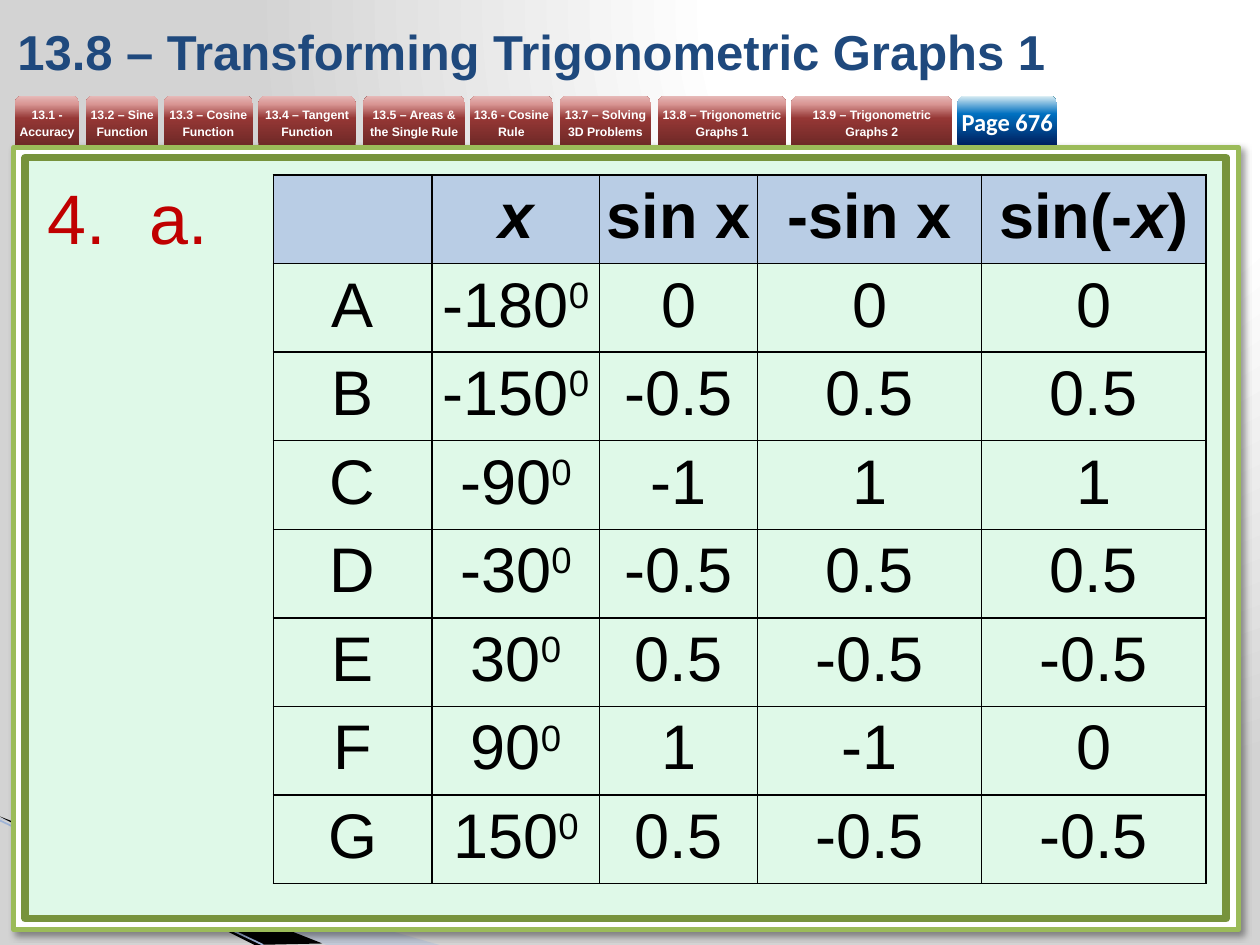
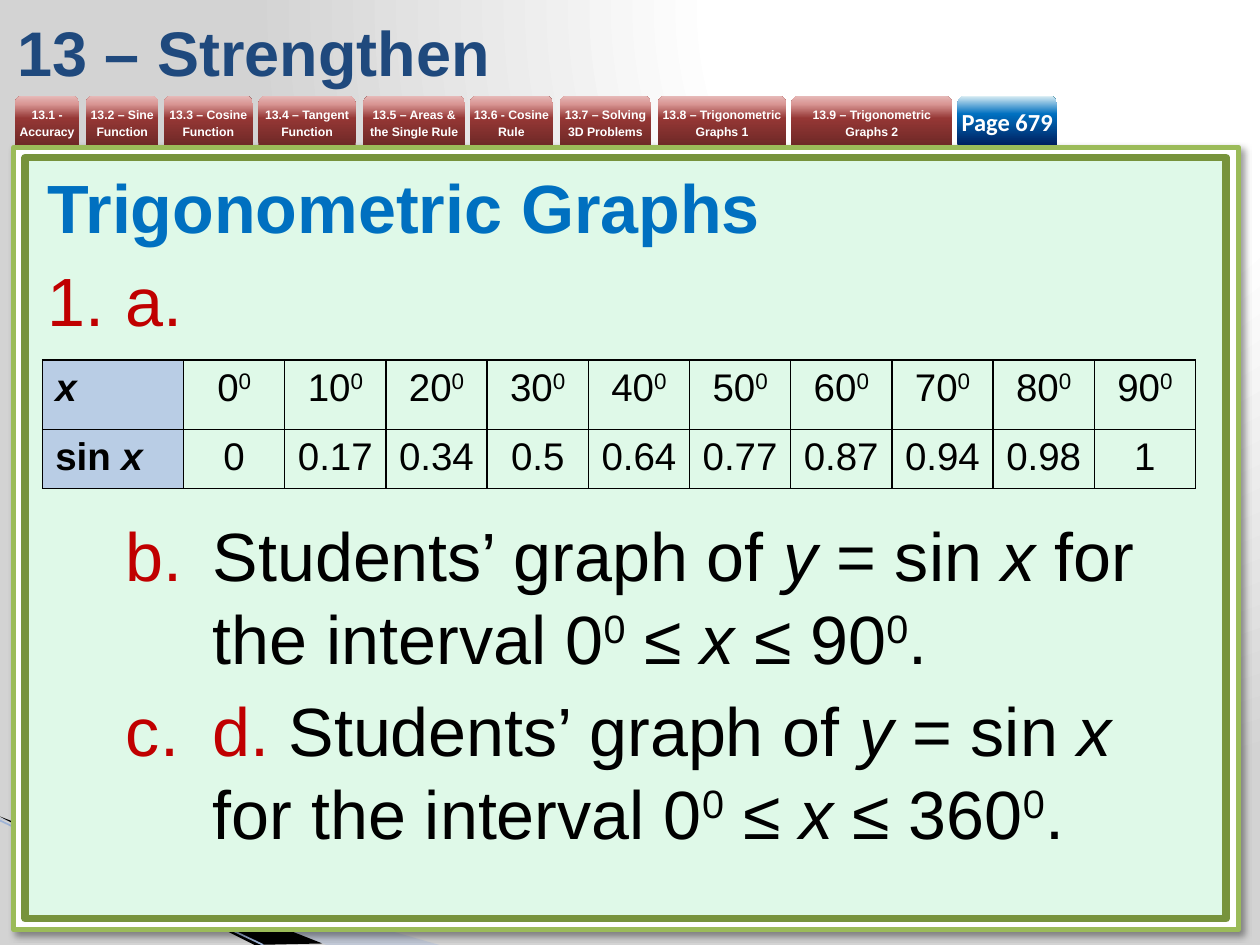
from lxml import etree
from pptx import Presentation
from pptx import util as u
from pptx.dml.color import RGBColor
from pptx.enum import shapes, text
from pptx.oxml import ns

Cm, Pt = u.Cm, u.Pt
WHITE = RGBColor(0xFF, 0xFF, 0xFF)
BLACK = RGBColor(0, 0, 0)
SILVER = RGBColor(0xD3, 0xD3, 0xD3)
NAVY = RGBColor(0x1F, 0x49, 0x7D)
BLUE = RGBColor(0x00, 0x70, 0xC0)
RED = RGBColor(0xC0, 0, 0)
MINT = RGBColor(0xDF, 0xF9, 0xE8)
LIME = RGBColor(0x9B, 0xBB, 0x59)
OLIVE = RGBColor(0x77, 0x93, 0x3C)
HEADER_BLUE = RGBColor(0xB9, 0xCD, 0xE5)
WEDGE_BLUE = RGBColor(0xA7, 0xB9, 0xDB)
EDGE_BLUE = RGBColor(0x9E, 0xB3, 0xD6)

BACKDROP = [(0, WHITE), (40, WHITE), (100, SILVER)]
TAB_RED = [(0, RGBColor(0x6F, 0x29, 0x27)), (54, RGBColor(0x95, 0x37, 0x35)),
           (83, RGBColor(0xD9, 0x96, 0x94)), (100, RGBColor(0xE6, 0xB9, 0xB8))]
TAB_BLUE = [(0, RGBColor(0x00, 0x20, 0x60)), (63, BLUE),
            (100, RGBColor(0xDB, 0xEE, 0xF4))]

SECTIONS = [
    (0.3, 1.3, "13.1 - Accuracy"),
    (1.73, 1.47, "13.2 – Sine Function"),
    (3.3, 1.8, "13.3 – Cosine Function"),
    (5.21, 1.96, "13.4 – Tangent Function"),
    (7.32, 2.06, "13.5 – Areas & the Single Rule"),
    (9.47, 1.68, "13.6 - Cosine Rule"),
    (11.28, 1.85, "13.7 – Solving 3D Problems"),
    (13.26, 2.59, "13.8 – Trigonometric Graphs 1"),
    (15.95, 3.25, "13.9 – Trigonometric Graphs 2"),
]


def child(parent, tag, **attributes):
    return etree.SubElement(parent, ns.qn(tag), attributes)


def fill_gradient(owner, fill, stops, focus=None):
    fill.gradient()
    gradient = owner._element.find(".//" + ns.qn("a:gradFill"))
    for old in list(gradient):
        gradient.remove(old)
    stop_list = child(gradient, "a:gsLst")
    for position, color in stops:
        stop = child(stop_list, "a:gs", pos=str(position * 1000))
        child(stop, "a:srgbClr", val=str(color))
    if focus:
        path = child(gradient, "a:path", path="circle")
        child(path, "a:fillToRect", **focus)
    else:
        child(gradient, "a:lin", ang="16200000", scaled="0")


def add_runs(paragraph, runs, size, color, font="Arial"):
    for words, style in runs:
        run = paragraph.add_run()
        run.text = words
        run.font.name = font
        run.font.size = Pt(size)
        run.font.color.rgb = RED if "r" in style else color
        run.font.bold = "b" in style
        run.font.italic = "i" in style
        if "s" in style:
            run._r.get_or_add_rPr().set("baseline", "30000")


def degrees(number):
    return [(str(number), ""), ("0", "s")]


def add_wedge(slide, color, points, alpha=None):
    corners = [(Cm(x), Cm(y)) for x, y in points]
    builder = slide.shapes.build_freeform(*corners[0])
    builder.add_line_segments(corners[1:], close=True)
    wedge = builder.convert_to_shape()
    wedge.shadow.inherit = False
    wedge.fill.solid()
    wedge.fill.fore_color.rgb = color
    wedge.line.fill.background()
    if alpha:
        tint = wedge._element.spPr.find(".//" + ns.qn("a:srgbClr"))
        child(tint, "a:alpha", val=str(alpha * 1000))


def add_panel(slide, left, top, width, height, fill, edge, weight):
    panel = slide.shapes.add_shape(shapes.MSO_SHAPE.RECTANGLE,
                                   Cm(left), Cm(top), Cm(width), Cm(height))
    panel.shadow.inherit = False
    panel.fill.solid()
    panel.fill.fore_color.rgb = fill
    panel.line.color.rgb = edge
    panel.line.width = Pt(weight)
    return panel


def drop_shadow(panel):
    effects = panel._element.spPr.find(ns.qn("a:effectLst"))
    shadow = child(effects, "a:outerShdw", blurRad=str(Pt(4)),
                   dist=str(Pt(3)), dir="2700000", algn="tl", rotWithShape="0")
    child(child(shadow, "a:srgbClr", val=str(BLACK)), "a:alpha", val="40000")


def add_tab(slide, left, width, label, stops, size, font="Arial", spacing=None):
    tab = slide.shapes.add_shape(shapes.MSO_SHAPE.ROUND_2_SAME_RECTANGLE,
                                 Cm(left), Cm(1.93), Cm(width), Cm(0.99))
    tab.shadow.inherit = False
    fill_gradient(tab, tab.fill, stops)
    tab.line.fill.background()
    frame = tab.text_frame
    frame.margin_left = frame.margin_right = 0
    frame.margin_top = frame.margin_bottom = 0
    frame.vertical_anchor = text.MSO_ANCHOR.MIDDLE
    paragraph = frame.paragraphs[0]
    paragraph.alignment = text.PP_ALIGN.CENTER
    if spacing:
        paragraph.line_spacing = Pt(spacing)
    add_runs(paragraph, [(label, "b")], size, WHITE, font)


def add_box(slide, left, top, width, height):
    frame = slide.shapes.add_textbox(Cm(left), Cm(top), Cm(width),
                                     Cm(height)).text_frame
    frame.word_wrap = True
    return frame


def number(paragraph, scheme, start, margin, hanging):
    properties = paragraph._p.get_or_add_pPr()
    properties.set("marL", str(Cm(margin)))
    properties.set("indent", str(-Cm(hanging)))
    child(child(properties, "a:buClr"), "a:srgbClr", val=str(RED))
    child(properties, "a:buAutoNum", type=scheme, startAt=str(start))


def style_cell(cell, header):
    properties = cell._tc.get_or_add_tcPr()
    for side in ("a:lnL", "a:lnR", "a:lnT", "a:lnB"):
        border = child(properties, side, w=str(Pt(1)))
        child(child(border, "a:solidFill"), "a:srgbClr", val=str(BLACK))
    if header:
        cell.fill.solid()
        cell.fill.fore_color.rgb = HEADER_BLUE
    else:
        cell.fill.background()


def add_grid(slide, left, top, widths, heights, rows, size, is_header,
             margin=None, centre_headers=True):
    grid = slide.shapes.add_table(len(rows), len(widths), Cm(left), Cm(top),
                                  Cm(sum(widths)), Cm(sum(heights))).table
    grid.first_row = grid.horz_banding = False
    for column, width in zip(grid.columns, widths):
        column.width = Cm(width)
    for r, (row, height) in enumerate(zip(rows, heights)):
        grid.rows[r].height = Cm(height)
        for c, runs in enumerate(row):
            cell = grid.cell(r, c)
            header = is_header(r, c)
            style_cell(cell, header)
            if margin:
                cell.margin_left = cell.margin_right = Cm(margin)
                cell.margin_top = cell.margin_bottom = Cm(margin)
            paragraph = cell.text_frame.paragraphs[0]
            if centre_headers or not header:
                paragraph.alignment = text.PP_ALIGN.CENTER
            add_runs(paragraph, runs, size, BLACK)


def add_lesson_slide(deck, title, title_size, page):
    slide = deck.slides.add_slide(deck.slide_layouts[6])
    fill_gradient(slide, slide.background.fill, BACKDROP,
                  {"l": "65000", "t": "0", "r": "0", "b": "98000"})
    add_wedge(slide, WEDGE_BLUE,
              [(0, 16.51), (8.86, 19.05), (6.58, 19.05), (0, 16.48)], 40)
    add_wedge(slide, BLACK,
              [(0, 16.46), (6.5, 19.02), (5.13, 19.05), (0.03, 16.48)])
    edge = slide.shapes.add_connector(shapes.MSO_CONNECTOR.STRAIGHT,
                                      Cm(0), Cm(16.54), Cm(5.31), Cm(19.05))
    edge.line.color.rgb = EDGE_BLUE
    edge.line.width = Pt(0.95)
    child(edge._element.spPr, "a:effectLst")

    drop_shadow(add_panel(slide, 0.28, 2.97, 24.69, 15.77, WHITE, LIME, 3))
    add_panel(slide, 0.51, 3.18, 24.21, 15.34, MINT, OLIVE, 4.33)
    for left, width, label in SECTIONS:
        add_tab(slide, left, width, label, TAB_RED, 7, spacing=10)

    heading = add_box(slide, 0.1, 0.13, 21.41, 1.8)
    heading.vertical_anchor = text.MSO_ANCHOR.MIDDLE
    add_runs(heading.paragraphs[0], [(title, "b")], title_size, NAVY)
    add_tab(slide, 19.3, 2.01, f"Page {page}", TAB_BLUE, 14, "Calibri")
    return slide


def add_transforming_slide(deck):
    slide = add_lesson_slide(
        deck, "13.8 – Transforming Trigonometric Graphs 1", 28, 676)
    question = add_box(slide, 0.71, 3.4, 4.6, 1.96).paragraphs[0]
    number(question, "arabicPeriod", 4, 2.06, 2.06)
    question.line_spacing = Pt(48)
    add_runs(question, [("a.", "")], 40, RED)

    points = [
        ("A", -180, "0", "0", "0"),
        ("B", -150, "-0.5", "0.5", "0.5"),
        ("C", -90, "-1", "1", "1"),
        ("D", -30, "-0.5", "0.5", "0.5"),
        ("E", 30, "0.5", "-0.5", "-0.5"),
        ("F", 90, "1", "-1", "0"),
        ("G", 150, "0.5", "-0.5", "-0.5"),
    ]
    rows = [[[], [("x", "bi")], [("sin x", "b")], [("-sin x", "b")],
             [("sin(-", "b"), ("x", "bi"), (")", "b")]]]
    for name, angle, *values in points:
        rows.append([[(name, "")], degrees(angle)]
                    + [[(value, "")] for value in values])
    add_grid(slide, 5.51, 3.53, [3.2, 3.38, 3.18, 4.52, 4.52],
             [1.78] * len(rows), rows, 36, lambda r, c: r == 0, margin=0.13)


def add_strengthen_slide(deck):
    slide = add_lesson_slide(deck, "13 – Strengthen", 36, 679)
    graph_of = [("Students’ graph of ", ""), ("y", "i"), (" = sin ", ""),
                ("x", "i"), (" for the interval 0", ""), ("0", "s"),
                (" ≤ ", ""), ("x", "i")]

    answers = add_box(slide, 0.71, 3.2, 23.8, 14.22)
    topic = answers.paragraphs[0]
    add_runs(topic, [("Trigonometric Graphs", "b")], 39, BLUE)
    question = answers.add_paragraph()
    question.space_before = Pt(6)
    number(question, "arabicPeriod", 1, 1.57, 1.57)
    add_runs(question, [("a.", "")], 39, RED)
    parts = [(99, [], 90), (6, [("d. ", "r")], 360)]
    for gap, prefix, limit in parts:
        part = answers.add_paragraph()
        part.level = 1
        part.space_before = Pt(gap)
        number(part, "alphaLcPeriod", 2, 3.33, 1.75)
        ending = [(f" ≤ {limit}", ""), ("0", "s"), (".", "")]
        add_runs(part, prefix + graph_of + ending, 39, BLACK)
    for paragraph in answers.paragraphs:
        paragraph.line_spacing = Pt(47)

    sines = ["0", "0.17", "0.34", "0.5", "0.64", "0.77", "0.87", "0.94",
             "0.98", "1"]
    rows = [
        [[("x", "bi")]] + [degrees(10 * n) for n in range(len(sines))],
        [[("sin ", "b"), ("x", "bi")]] + [[(sine, "")] for sine in sines],
    ]
    add_grid(slide, 0.86, 7.26, [2.84] + [2.04] * len(sines), [1.4, 1.19],
             rows, 22, lambda r, c: c == 0, centre_headers=False)


def main():
    deck = Presentation()
    deck.slide_width, deck.slide_height = Cm(25.4), Cm(19.05)
    add_transforming_slide(deck)
    add_strengthen_slide(deck)
    deck.save("out.pptx")


if __name__ == "__main__":
    main()
